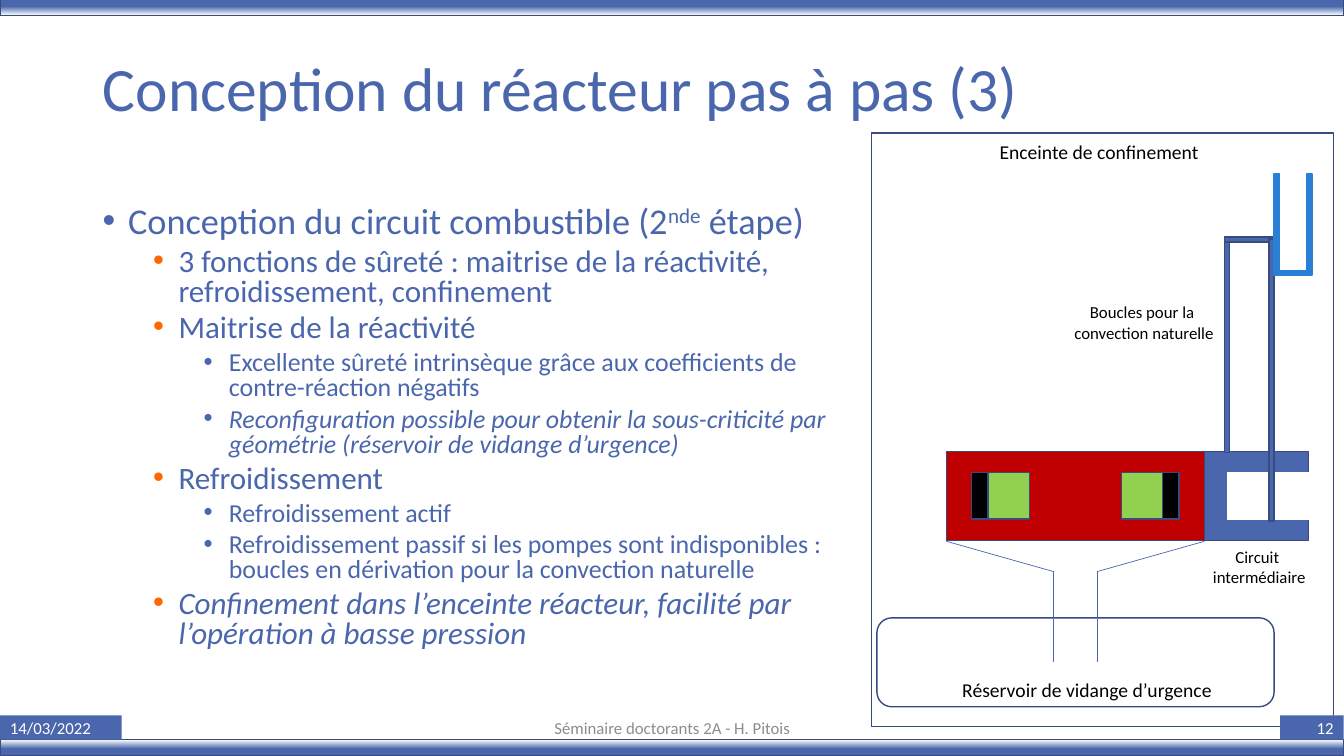
from dataclasses import dataclass
from typing import Any

from lxml import etree
from pptx import Presentation
from pptx import util as u
from pptx.dml import color as col
from pptx.enum import shapes as sh, text as tx
from pptx.oxml import ns

FONT = "Calibri"
BLUE, EDGE, SKY = "4A66AC", "374B7F", "297FD5"
WHITE, BLACK, ORANGE = "FFFFFF", "000000", "FF6600"
WIDE, HIGH = 33.87, 19.05
LEFT, MID, RIGHT = tx.PP_ALIGN.LEFT, tx.PP_ALIGN.CENTER, tx.PP_ALIGN.RIGHT


@dataclass
class Box:
    """A rectangle, in centimetres."""
    x: float
    y: float
    w: float
    h: float
    fill: str | None = None
    edge: str | None = EDGE
    kind: Any = sh.MSO_SHAPE.RECTANGLE


@dataclass
class Label:
    x: float
    y: float
    w: float
    h: float
    lines: list[str]
    size: float = 12
    tint: str = BLACK
    align: Any = MID


@dataclass
class Run:
    text: str
    slant: bool = False
    base: int = 0


@dataclass
class Point:
    level: int
    runs: list[Run]


@dataclass
class Style:
    """Look of one outline level; the indent is in centimetres."""
    size: float
    indent: float
    before: float
    dot: str


STYLES = [
    Style(25.9, 0.64, 10, BLUE),
    Style(22.2, 1.91, 5, ORANGE),
    Style(18.5, 3.18, 5, BLUE),
]

POINTS = [
    Point(0, [Run("Conception du circuit combustible (2"), Run("nde", base=30000),
              Run(" étape)")]),
    Point(1, [Run("3 fonctions de sûreté : maitrise de la réactivité, "
                  "refroidissement, confinement")]),
    Point(1, [Run("Maitrise de la réactivité")]),
    Point(2, [Run("Excellente sûreté intrinsèque grâce aux coefficients de "
                  "contre-réaction négatifs")]),
    Point(2, [Run("Reconfiguration possible pour obtenir la sous-criticité par "
                  "géométrie (réservoir de vidange d’urgence)", True)]),
    Point(1, [Run("Refroidissement")]),
    Point(2, [Run("Refroidissement actif")]),
    Point(2, [Run("Refroidissement passif si les pompes sont indisponibles : "
                  "boucles en dérivation pour la convection naturelle")]),
    Point(1, [Run("Confinement dans l’enceinte réacteur, facilité par "
                  "l’opération à basse pression", True)]),
]

CORE = [
    Box(23.85, 11.38, 6.5, 2.24, "C00000"),
    Box(24.49, 11.91, 1.45, 1.17, "92D050"),
    Box(28.27, 11.91, 1.45, 1.17, "92D050"),
    Box(24.49, 11.91, 0.41, 1.17, BLACK),
    Box(29.29, 11.91, 0.41, 1.17, BLACK),
]
TANK = Box(22.1, 15.57, 10.01, 2.24, kind=sh.MSO_SHAPE.ROUNDED_RECTANGLE)
DRAINS = [(23.85, 26.54), (30.35, 27.66)]
LOOP = [
    Box(30.35, 11.38, 2.62, 2.24, BLUE),
    Box(30.94, 11.91, 2.03, 1.19, WHITE, WHITE),
    Box(30.86, 6.02, 0.13, 5.38, BLUE),
    Box(30.86, 5.97, 1.24, 0.13, BLUE),
    Box(31.98, 6.02, 0.13, 7.11, BLUE),
    Box(32.11, 4.39, 0.13, 2.54, SKY, SKY),
    Box(32.94, 4.39, 0.13, 2.54, SKY, SKY),
    Box(32.23, 6.81, 0.74, 0.13, SKY, SKY),
]
HALL = Box(21.97, 3.35, 11.63, 14.96)
NOTES = [
    Label(24, 16.97, 6.86, 0.86, ["Réservoir de vidange d’urgence"], 14, align=LEFT),
    Label(30.3, 13.64, 2.87, 1.27, ["Circuit ", "intermédiaire"]),
    Label(26.8, 7.49, 4.06, 1.27, ["Boucles pour la ", "convection naturelle"]),
    Label(24.94, 3.4, 5.59, 0.86, ["Enceinte de confinement"], 14, align=LEFT),
]
TITLE = Label(2.34, 1.02, 29.21, 2.57, ["Conception du réacteur pas à pas (3)"],
              44, BLUE, LEFT)
FOOT = [
    Label(0, 18.03, 3.07, 0.61, ["14/03/2022"], 12, WHITE, LEFT),
    Label(11.23, 18.03, 11.43, 0.64, ["Séminaire doctorants 2A - H. Pitois"], 12, "8C8C8C"),
    Label(32.26, 18.03, 1.6, 0.61, ["12"], 12, WHITE, RIGHT),
]


def paint(target: Any, tint: str) -> None:
    target.rgb = col.RGBColor.from_string(tint)


def place(item: Box | Label) -> list[u.Length]:
    return [u.Cm(v) for v in (item.x, item.y, item.w, item.h)]


def add_box(tree: Any, box: Box) -> Any:
    shape = tree.add_shape(box.kind, *place(box))
    shape.shadow.inherit = False
    if box.fill:
        shape.fill.solid()
        paint(shape.fill.fore_color, box.fill)
    else:
        shape.fill.background()
    if box.edge:
        paint(shape.line.color, box.edge)
        shape.line.width = u.Pt(1)
    else:
        shape.line.fill.background()
    return shape


def add_bar(tree: Any, y: float, turn: int) -> None:
    bar = add_box(tree, Box(0, y, WIDE, 0.41))
    bar.rotation = turn
    bar.fill.gradient()
    bar.fill.gradient_angle = 270
    for stop, tint, pos in zip(bar.fill.gradient_stops, (WHITE, BLUE), (0, 0.56)):
        paint(stop.color, tint)
        stop.position = pos


def add_line(tree: Any, x1: float, y1: float, x2: float, y2: float) -> None:
    line = tree.add_connector(sh.MSO_CONNECTOR.STRAIGHT, *map(u.Cm, (x1, y1, x2, y2)))
    paint(line.line.color, BLUE)
    line.line.width = u.Pt(0.5)
    etree.SubElement(line._element.spPr, ns.qn("a:effectLst"))


def add_run(para: Any, text: str, size: float, tint: str) -> Any:
    run = para.add_run()
    run.text = text
    run.font.name = FONT
    run.font.size = u.Pt(size)
    paint(run.font.color, tint)
    return run


def write(shape: Any, label: Label, wrap: bool = True) -> None:
    """Fill a shape with the lines of a label."""
    frame = shape.text_frame
    frame.word_wrap = wrap
    if wrap:
        frame.vertical_anchor = tx.MSO_ANCHOR.MIDDLE
    else:
        frame.auto_size = tx.MSO_AUTO_SIZE.SHAPE_TO_FIT_TEXT
    para = frame.paragraphs[0]
    para.alignment = label.align
    for i, line in enumerate(label.lines):
        if i:
            para.add_line_break()
        add_run(para, line, label.size, label.tint)


def add_point(para: Any, point: Point) -> None:
    style = STYLES[point.level]
    para.level = point.level
    para.line_spacing = 0.8
    para.space_before = u.Pt(style.before)
    props = para._p.get_or_add_pPr()
    props.set("marL", str(u.Cm(style.indent)))
    props.set("indent", str(-u.Cm(0.64)))
    tint = etree.SubElement(props, ns.qn("a:buClr"))
    etree.SubElement(tint, ns.qn("a:srgbClr"), val=style.dot)
    etree.SubElement(props, ns.qn("a:buFont"), typeface="Arial")
    etree.SubElement(props, ns.qn("a:buChar"), char="•")
    for part in point.runs:
        run = add_run(para, part.text, style.size, BLUE)
        run.font.italic = part.slant
        if part.base:
            run.font._element.set("baseline", str(part.base))


def main() -> None:
    deck = Presentation()
    deck.slide_width, deck.slide_height = u.Cm(WIDE), u.Cm(HIGH)
    tree = deck.slides.add_slide(deck.slide_layouts[6]).shapes
    add_bar(tree, 18.64, 0)
    add_bar(tree, -0.02, 180)

    title = tree.add_textbox(*place(TITLE))
    write(title, TITLE)
    title.text_frame.paragraphs[0].line_spacing = 0.9
    frame = tree.add_textbox(*map(u.Cm, (2.34, 5.08, 19.76, 12.09))).text_frame
    frame.word_wrap = True
    for i, point in enumerate(POINTS):
        add_point(frame.add_paragraph() if i else frame.paragraphs[0], point)

    core = tree.add_group_shape().shapes
    for box in CORE:
        add_box(core, box)
    add_box(tree, TANK)
    for start, end in DRAINS:
        add_line(tree, start, 13.64, end, 14.4)
        add_line(tree, end, 14.4, end, 16.69)
    for box in LOOP + [HALL]:
        add_box(tree, box)
    for note in NOTES:
        write(tree.add_textbox(*place(note)), note, wrap=False)
    for foot in FOOT:
        fill = BLUE if foot.tint == WHITE else None
        write(add_box(tree, Box(foot.x, foot.y, foot.w, foot.h, fill, None)), foot)
    deck.save("out.pptx")


if __name__ == "__main__":
    main()
